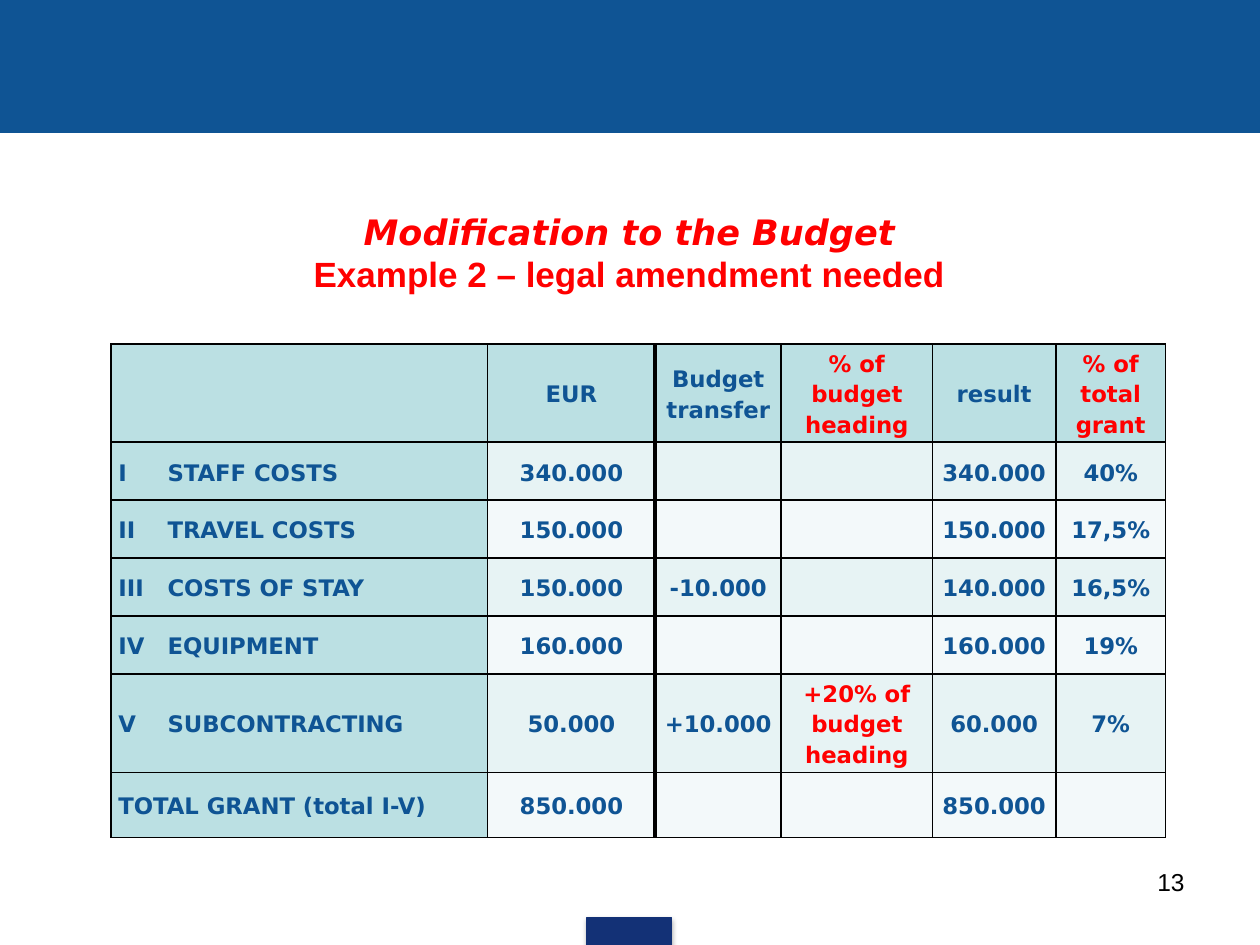
from lxml import etree
from pptx import Presentation
from pptx.dml.color import RGBColor
from pptx.enum.shapes import MSO_SHAPE
from pptx.enum.text import MSO_ANCHOR, MSO_AUTO_SIZE, PP_ALIGN
from pptx.oxml import parse_xml
from pptx.oxml.ns import nsdecls, qn
from pptx.util import Inches, Pt

COLORS = {
    "band": "0F5494", "tab": "133176", "text": "0F5494", "accent": "FF0000",
    "head": "BBE0E3", "odd": "E7F3F4", "even": "F3F9FA", "black": "000000",
}
COL_WIDTHS = [2.99, 1.33, 1, 1.2, 0.98, 0.87]
ROW_HEIGHTS = [0.78, 0.46, 0.46, 0.46, 0.46, 0.78, 0.52]
ROWS = [
    ["", "EUR", "Budget transfer", "% of budget heading", "result", "% of total grant"],
    ["I\tSTAFF COSTS", "340.000", "", "", "340.000", "40%"],
    ["II\tTRAVEL COSTS", "150.000", "", "", "150.000", "17,5%"],
    ["III\tCOSTS OF STAY", "150.000", "-10.000", "", "140.000", "16,5%"],
    ["IV\tEQUIPMENT", "160.000", "", "", "160.000", "19%"],
    ["V\tSUBCONTRACTING", "50.000", "+10.000", "+20% of budget heading", "60.000", "7%"],
    ["TOTAL GRANT (total I-V)", "850.000", "", "", "850.000", ""],
]


def rgb(name):
    return RGBColor.from_string(COLORS[name])


def add_run(p, text, font, size, color, bold=False, italic=False):
    r = p.add_run()
    r.text = text
    r.font.name, r.font.size = font, Pt(size)
    r.font.bold, r.font.italic = bold, italic
    r.font.color.rgb = rgb(color)


def add_bar(s, box, color):
    sp = s.shapes.add_shape(MSO_SHAPE.RECTANGLE, *map(Inches, box))
    sp.shadow.inherit = False
    sp.fill.solid()
    sp.fill.fore_color.rgb = rgb(color)
    sp.line.color.rgb = rgb(color)
    sp.line.width = Pt(0.75)
    return sp


def add_soft_shadow(sp):
    effects = sp._element.spPr.find(qn("a:effectLst"))
    effects.append(parse_xml(
        f'<a:outerShdw {nsdecls("a")} blurRad="{Pt(3.1)}" dist="{Pt(1.8)}" dir="5400000" '
        f'rotWithShape="0"><a:srgbClr val="{COLORS["black"]}"><a:alpha val="35000"/>'
        '</a:srgbClr></a:outerShdw>'))


def fill_title(s, box):
    title = s.shapes.title
    title.left, title.top, title.width, title.height = map(Inches, box)
    tf = title.text_frame
    tf.word_wrap = True
    tf.auto_size = MSO_AUTO_SIZE.SHAPE_TO_FIT_TEXT
    tf.vertical_anchor = MSO_ANCHOR.MIDDLE
    lines = [("Modification to the Budget", "DejaVu Sans", True),
             ("Example 2 – legal amendment needed", "Arial", False)]
    for i, (text, font, italic) in enumerate(lines):
        p = tf.add_paragraph() if i else tf.paragraphs[0]
        p.alignment = PP_ALIGN.CENTER
        add_run(p, text, font, 20, "accent", bold=True, italic=italic)


def set_borders(cell, col):
    """Draw thin borders, with a heavy rule between columns 1 and 2."""
    tc_pr = cell._tc.get_or_add_tcPr()
    for side in "LRTB":
        heavy = (col, side) in {(1, "R"), (2, "L")}
        ln = etree.SubElement(tc_pr, qn(f"a:ln{side}"), w=str(Pt(3 if heavy else 1)))
        fill = etree.SubElement(ln, qn("a:solidFill"))
        etree.SubElement(fill, qn("a:srgbClr"), val=COLORS["black"])


def add_tab_stop(p, position):
    tabs = etree.SubElement(p._p.get_or_add_pPr(), qn("a:tabLst"))
    etree.SubElement(tabs, qn("a:tab"), pos=str(Inches(position)), algn="l")


def fill_cell(cell, row, col, text):
    set_borders(cell, col)
    cell.fill.solid()
    is_head = row == 0 or col == 0
    cell.fill.fore_color.rgb = rgb("head" if is_head else "odd" if row % 2 else "even")
    cell.margin_left = cell.margin_right = Inches(0.06)
    cell.margin_top = cell.margin_bottom = 0
    cell.vertical_anchor = MSO_ANCHOR.MIDDLE
    if text:
        p = cell.text_frame.paragraphs[0]
        if "\t" in text:
            add_tab_stop(p, 0.39)
        p.line_spacing = 1.15
        p.alignment = PP_ALIGN.CENTER if col else PP_ALIGN.LEFT
        add_run(p, text, "DejaVu Sans", 13, "accent" if "% of" in text else "text", bold=True)


def add_budget_table(s, box):
    table = s.shapes.add_table(len(ROWS), len(COL_WIDTHS), *map(Inches, box)).table
    table.first_row = table.horz_banding = False
    for column, width in zip(table.columns, COL_WIDTHS):
        column.width = Inches(width)
    for i, (height, texts) in enumerate(zip(ROW_HEIGHTS, ROWS)):
        table.rows[i].height = Inches(height)
        for j, text in enumerate(texts):
            fill_cell(table.cell(i, j), i, j, text)


def add_page_number(s, box):
    tf = s.shapes.add_textbox(*map(Inches, box)).text_frame
    tf.word_wrap = True
    p = tf.paragraphs[0]
    p.alignment = PP_ALIGN.RIGHT
    add_run(p, "13", "Arial", 14, "black")


def main():
    prs = Presentation()
    prs.slide_width, prs.slide_height = Inches(10), Inches(7.5)
    s = prs.slides.add_slide(prs.slide_layouts[5])
    add_bar(s, (0, 0, 10, 1.05), "band")
    add_soft_shadow(add_bar(s, (4.66, 7.28, 0.67, 0.22), "tab"))
    fill_title(s, (1.06, 1.62, 7.87, 0.77))
    add_budget_table(s, (0.88, 2.73, sum(COL_WIDTHS), sum(ROW_HEIGHTS)))
    add_page_number(s, (7.17, 6.83, 2.33, 0.52))
    prs.save("out.pptx")


if __name__ == "__main__":
    main()
